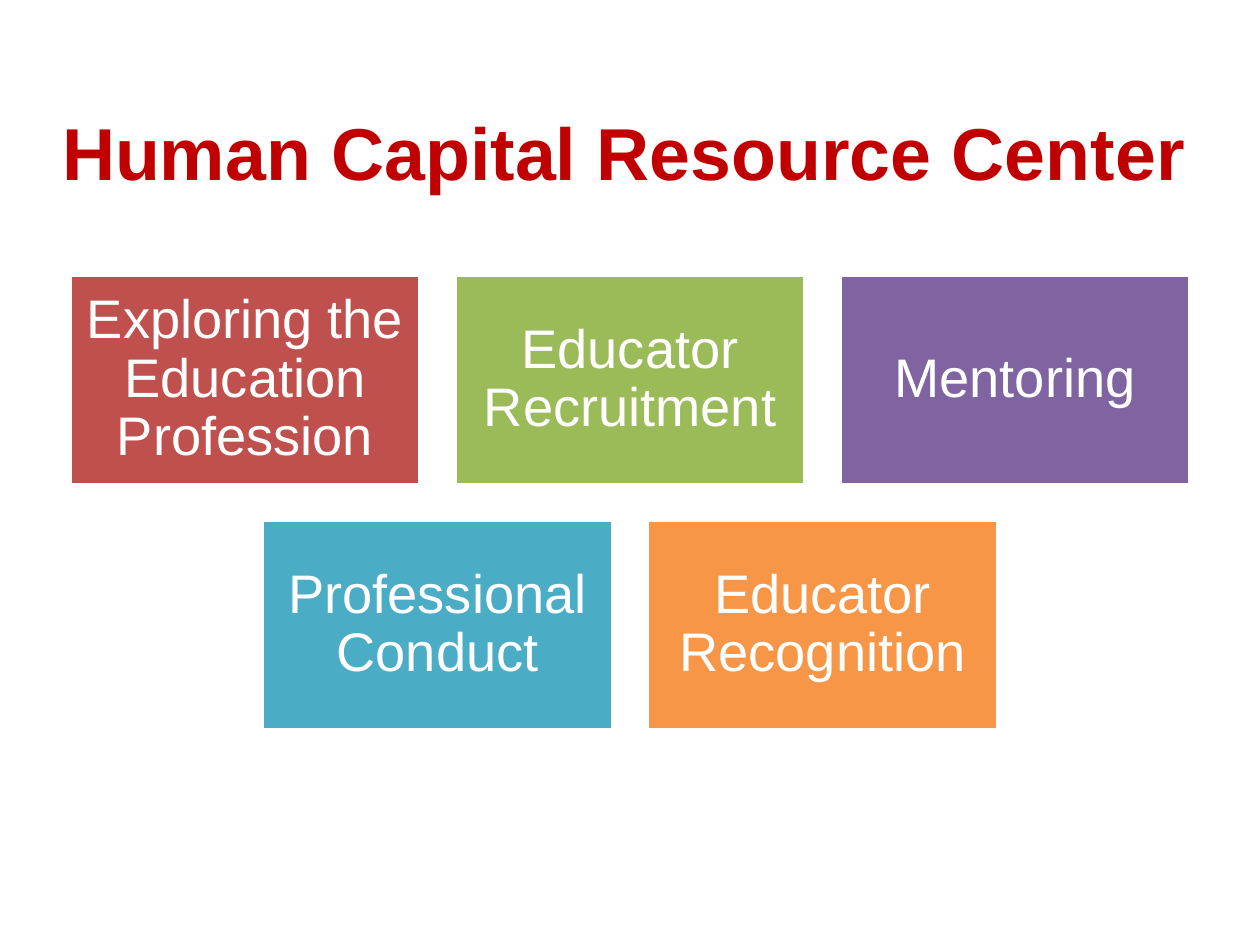
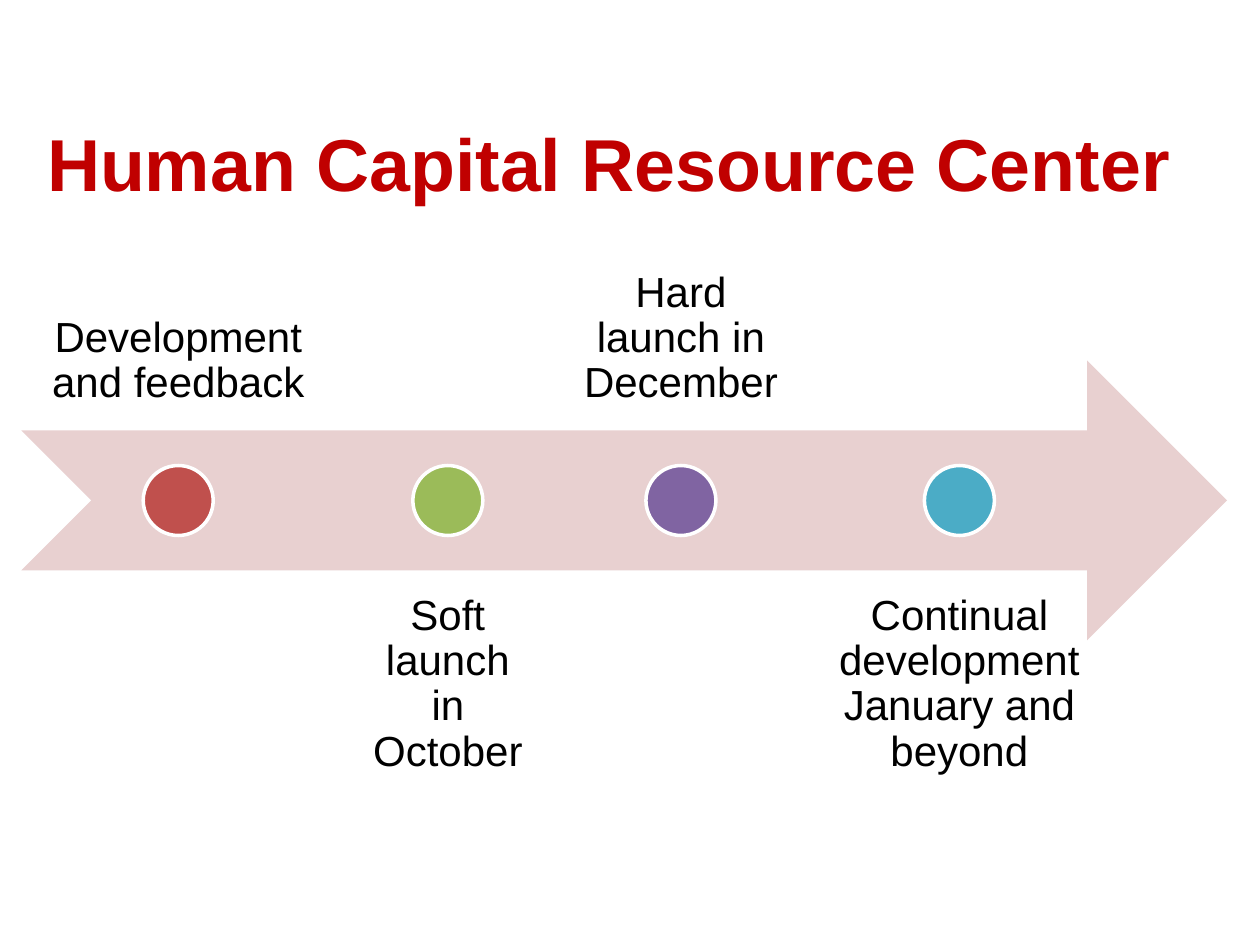
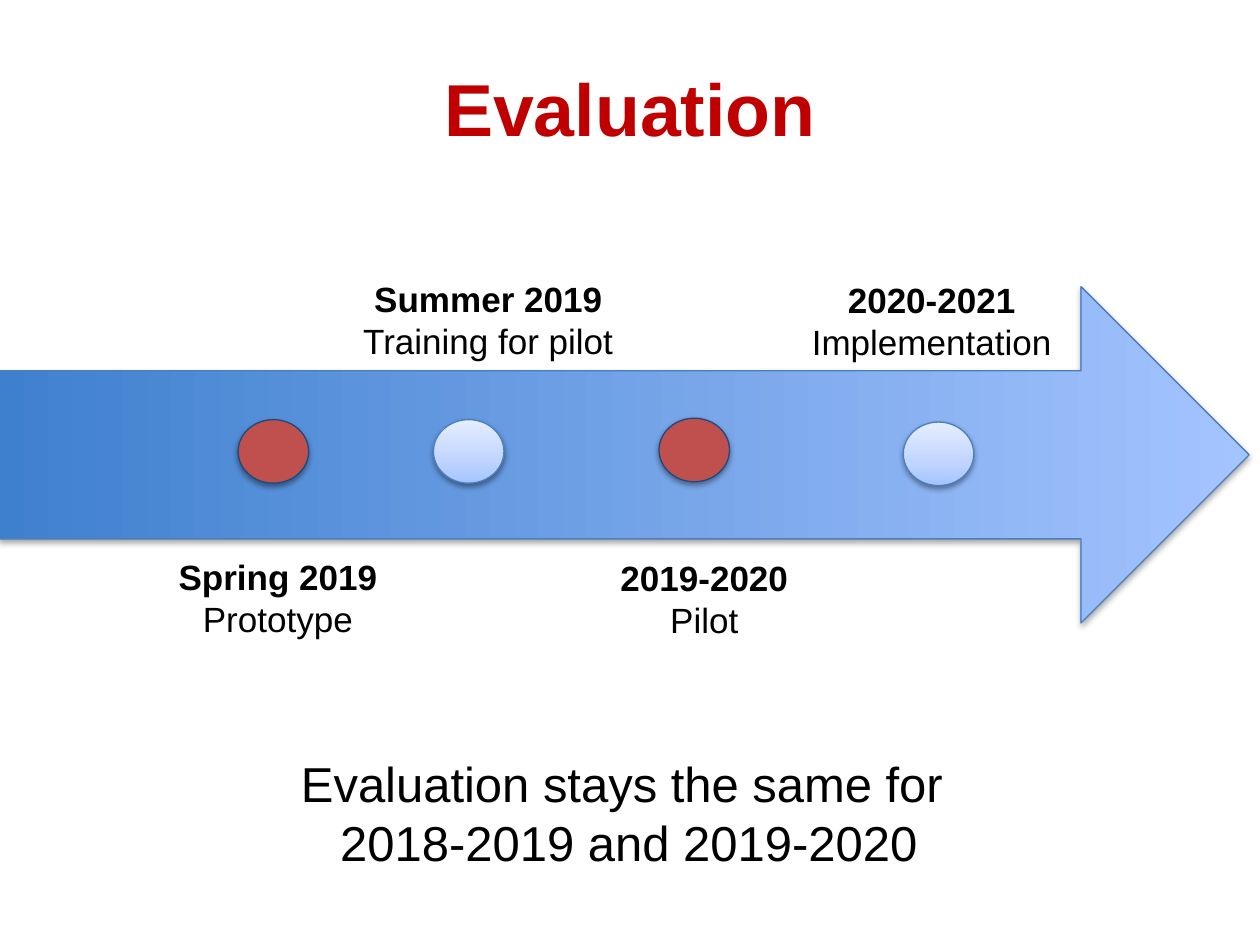
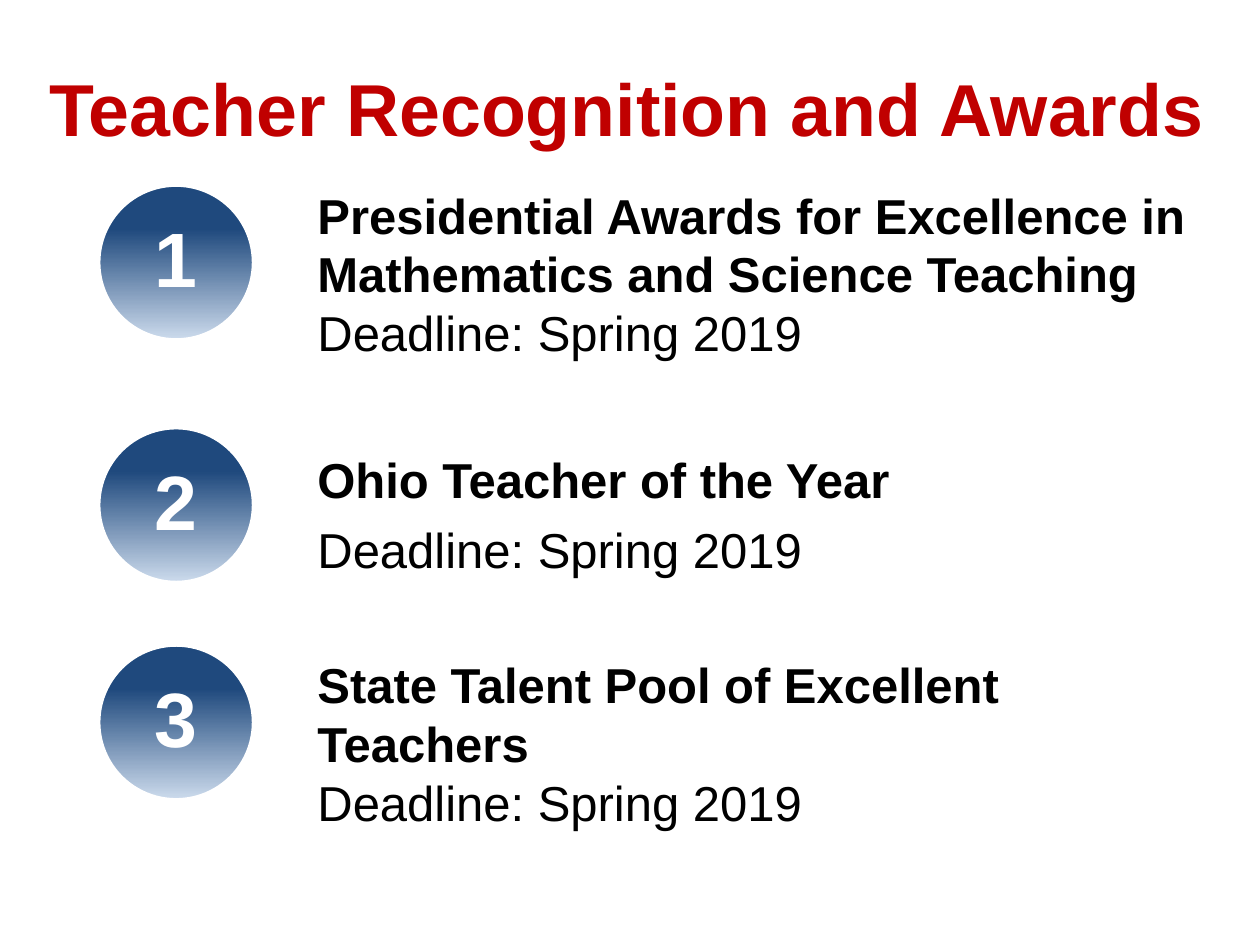
from dataclasses import dataclass
from typing import NamedTuple

from lxml.etree import SubElement
from pptx import Presentation
from pptx.dml.color import RGBColor
from pptx.enum.shapes import MSO_SHAPE
from pptx.enum.text import MSO_ANCHOR, PP_ALIGN
from pptx.oxml.ns import qn
from pptx.util import Pt


@dataclass(frozen=True)
class Theme:
    font: str = "Arial"
    title: str = "C00000"
    ink: str = "000000"
    white: str = "FFFFFF"
    red: str = "C0504D"
    green: str = "9BBB59"
    purple: str = "8064A2"
    teal: str = "4BACC6"
    orange: str = "F79646"
    blush: str = "E8D0D0"
    navy: str = "1F497D"
    edge: str = "4B7EBC"
    sky: tuple = ((0, "3F80CE"), (100, "A4C4FF"))
    ice: tuple = ((0, "A4C4FF"), (35, "BFD4FF"), (100, "E6EEFF"))
    badge: tuple = ((8, "1F497D"), (28, "1F497D"), (99, "CAD9EB"))
    head: float = 42
    digit: float = 44
    tile: float = 31
    body: float = 28
    step: float = 24
    label: float = 20


THEME = Theme()
WIDE, HIGH = 720, 540


class Box(NamedTuple):
    left: float
    top: float
    width: float
    height: float


class Run(NamedTuple):
    text: str
    bold: bool = False


class Para(NamedTuple):
    """Runs are set on lines of their own within the paragraph."""
    runs: tuple
    before: float = 0


@dataclass(frozen=True)
class Style:
    size: float
    color: str = THEME.ink
    align: PP_ALIGN = PP_ALIGN.CENTER
    anchor: MSO_ANCHOR = MSO_ANCHOR.TOP
    inset: tuple = (0, 0)
    lead: float = 1.0


class Tile(NamedTuple):
    text: str
    color: str


class Step(NamedTuple):
    text: str
    color: str
    width: float


class Mark(NamedTuple):
    left: float
    top: float
    paint: str | tuple
    edge: str


class Label(NamedTuple):
    date: str
    note: str
    box: Box


def rgb(code: str) -> RGBColor:
    return RGBColor.from_string(code)


def plain(text: str, bold: bool = False) -> Para:
    return Para((Run(text, bold),))


def write(frame, paras: list[Para], style: Style) -> None:
    frame.word_wrap = True
    frame.vertical_anchor = style.anchor
    frame.margin_left = frame.margin_right = Pt(style.inset[0])
    frame.margin_top = frame.margin_bottom = Pt(style.inset[1])
    for spot, para in enumerate(paras):
        line = frame.add_paragraph() if spot else frame.paragraphs[0]
        line.alignment = style.align
        line.line_spacing = style.lead
        if para.before:
            line.space_before = Pt(para.before)
        for turn, part in enumerate(para.runs):
            if turn:
                line.add_line_break()
            run = line.add_run()
            run.text = part.text
            run.font.name = THEME.font
            run.font.size = Pt(style.size)
            run.font.bold = part.bold
            run.font.color.rgb = rgb(style.color)


def add_text(slide, box: Box, paras: list[Para], style: Style) -> None:
    write(slide.shapes.add_textbox(*map(Pt, box)).text_frame, paras, style)


def blend(shape, stops: tuple, angle: float) -> None:
    """Fill with a linear gradient; the angle runs counter-clockwise."""
    shape.fill.gradient()
    shape.fill.gradient_angle = angle
    ramp = shape._element.spPr.find(qn("a:gradFill")).find(qn("a:gsLst"))
    ramp.clear()
    for place, code in stops:
        stop = SubElement(ramp, qn("a:gs"), pos=str(place * 1000))
        SubElement(stop, qn("a:srgbClr"), val=code)


def cast(shape, drop: float, alpha: int) -> None:
    """Give the shape a soft black shadow straight below it."""
    effects = shape._element.spPr.find(qn("a:effectLst"))
    shade = SubElement(effects, qn("a:outerShdw"), blurRad=str(Pt(3.15)),
                       dist=str(Pt(drop)), dir="5400000", rotWithShape="0")
    color = SubElement(shade, qn("a:srgbClr"), val=THEME.ink)
    SubElement(color, qn("a:alpha"), val=str(alpha * 1000))


def add_form(slide, kind: MSO_SHAPE, box: Box, paint: str | tuple,
             edge: str = "", weight: float = 2, angle: float = 90):
    shape = slide.shapes.add_shape(kind, *map(Pt, box))
    shape.shadow.inherit = False
    if isinstance(paint, str):
        shape.fill.solid()
        shape.fill.fore_color.rgb = rgb(paint)
    else:
        blend(shape, paint, angle)
    if edge:
        shape.line.color.rgb = rgb(edge)
        shape.line.width = Pt(weight)
    else:
        shape.line.fill.background()
    return shape


def add_page(deck, title: str, box: Box):
    slide = deck.slides.add_slide(deck.slide_layouts[6])
    add_text(slide, box, [plain(title, True)], Style(THEME.head, THEME.title))
    return slide


def draw_tiles(deck) -> None:
    slide = add_page(deck, "Human Capital Resource Center",
                     Box(32.4, 61.2, 648, 51))
    rows = (
        (Tile("Exploring the Education Profession", THEME.red),
         Tile("Educator Recruitment", THEME.green),
         Tile("Mentoring", THEME.purple)),
        (Tile("Professional Conduct", THEME.teal),
         Tile("Educator Recognition", THEME.orange)),
    )
    width, height, gap, top = 200, 120, 20, 157
    style = Style(THEME.tile, THEME.white, anchor=MSO_ANCHOR.MIDDLE,
                  inset=(9.3, 9.3), lead=0.9)
    for line, row in enumerate(rows):
        start = (WIDE - len(row) * (width + gap) + gap) / 2
        for col, tile in enumerate(row):
            box = Box(start + col * (width + gap), top + line * (height + gap),
                      width, height)
            shape = add_form(slide, MSO_SHAPE.RECTANGLE, box, tile.color,
                             THEME.white)
            write(shape.text_frame, [plain(tile.text)], style)


def draw_launch(deck) -> None:
    slide = add_page(deck, "Human Capital Resource Center",
                     Box(23.8, 67.7, 648, 51))
    arrow = Box(12.2, 206, 689, 160)
    add_form(slide, MSO_SHAPE.NOTCHED_RIGHT_ARROW, arrow, THEME.blush)
    steps = (
        Step("Development and feedback", THEME.red, 179.3),
        Step("Soft launch in October", THEME.green, 116.6),
        Step("Hard launch in December", THEME.purple, 137.6),
        Step("Continual development January and beyond", THEME.teal, 168.5),
    )
    mid = arrow.top + arrow.height / 2
    left, gap, dot = arrow.left, 6.1, 40
    for spot, step in enumerate(steps):
        above = spot % 2 == 0
        top = mid - dot - arrow.height if above else mid + dot
        anchor = MSO_ANCHOR.BOTTOM if above else MSO_ANCHOR.TOP
        add_text(slide, Box(left, top, step.width, arrow.height),
                 [plain(step.text)],
                 Style(THEME.step, anchor=anchor, inset=(13.4, 13.4), lead=0.9))
        add_form(slide, MSO_SHAPE.OVAL,
                 Box(left + (step.width - dot) / 2, mid - dot / 2, dot, dot),
                 step.color, THEME.white)
        left += step.width + gap


def draw_review(deck) -> None:
    slide = add_page(deck, "Evaluation", Box(36, 36, 648, 51))
    arrow = add_form(slide, MSO_SHAPE.UP_ARROW, Box(260.6, -97.2, 192.2, 714.2),
                     THEME.sky, THEME.edge, 0.75)
    arrow.rotation = 90
    cast(arrow, 1.8, 35)
    marks = (
        Mark(136.1, 239.8, THEME.red, THEME.navy),
        Mark(247.7, 239.8, THEME.ice, THEME.edge),
        Mark(376.6, 239, THEME.red, THEME.navy),
        Mark(516.2, 241.2, THEME.ice, THEME.edge),
    )
    for mark in marks:
        dot = add_form(slide, MSO_SHAPE.FLOWCHART_CONNECTOR,
                       Box(mark.left, mark.top, 40.3, 36.3), mark.paint,
                       mark.edge, 0.75)
        cast(dot, 1.6, 38)
    labels = (
        Label("Spring 2019", "Prototype", Box(67, 317.5, 183.6, 49)),
        Label("Summer 2019", "Training for pilot", Box(198, 158.4, 162, 63.4)),
        Label("2019-2020", "Pilot", Box(332, 318.2, 141, 53.3)),
        Label("2020-2021", "Implementation", Box(458.6, 159.1, 147.6, 62)),
    )
    for label in labels:
        add_text(slide, label.box, [plain(label.date, True), plain(label.note)],
                 Style(THEME.label))
    add_text(slide, Box(26.6, 427, 665.3, 75),
             [plain("Evaluation stays the same for "),
              plain("2018-2019 and 2019-2020")],
             Style(THEME.body, inset=(7.2, 3.6)))


def draw_awards(deck) -> None:
    slide = add_page(deck, "Teacher Recognition and Awards",
                     Box(10, 36, 696.3, 101.5))
    due = Run("Deadline: Spring 2019")
    first = Run("Presidential Awards for Excellence in "
                "Mathematics and Science Teaching", True)
    paras = [
        Para((first, due)),
        Para((Run("Ohio Teacher of the Year", True),), 50.4),
        Para((due,), 6.4),
        Para((Run("State Talent Pool of Excellent Teachers", True),), 43.4),
        Para((due,)),
    ]
    add_text(slide, Box(181.4, 105.8, 502.6, 351.4), paras,
             Style(THEME.body, align=PP_ALIGN.LEFT))
    style = Style(THEME.digit, THEME.white, anchor=MSO_ANCHOR.MIDDLE,
                  inset=(5.6, 5.6), lead=0.9)
    for count, top in enumerate((105.8, 244.4, 368.6), 1):
        ball = add_form(slide, MSO_SHAPE.OVAL, Box(56.4, top, 88.5, 88.5),
                        THEME.badge, THEME.white, angle=270)
        write(ball.text_frame, [plain(str(count), True)], style)


def main() -> None:
    deck = Presentation()
    deck.slide_width, deck.slide_height = Pt(WIDE), Pt(HIGH)
    for draw in (draw_tiles, draw_launch, draw_review, draw_awards):
        draw(deck)
    deck.save("out.pptx")


if __name__ == "__main__":
    main()
